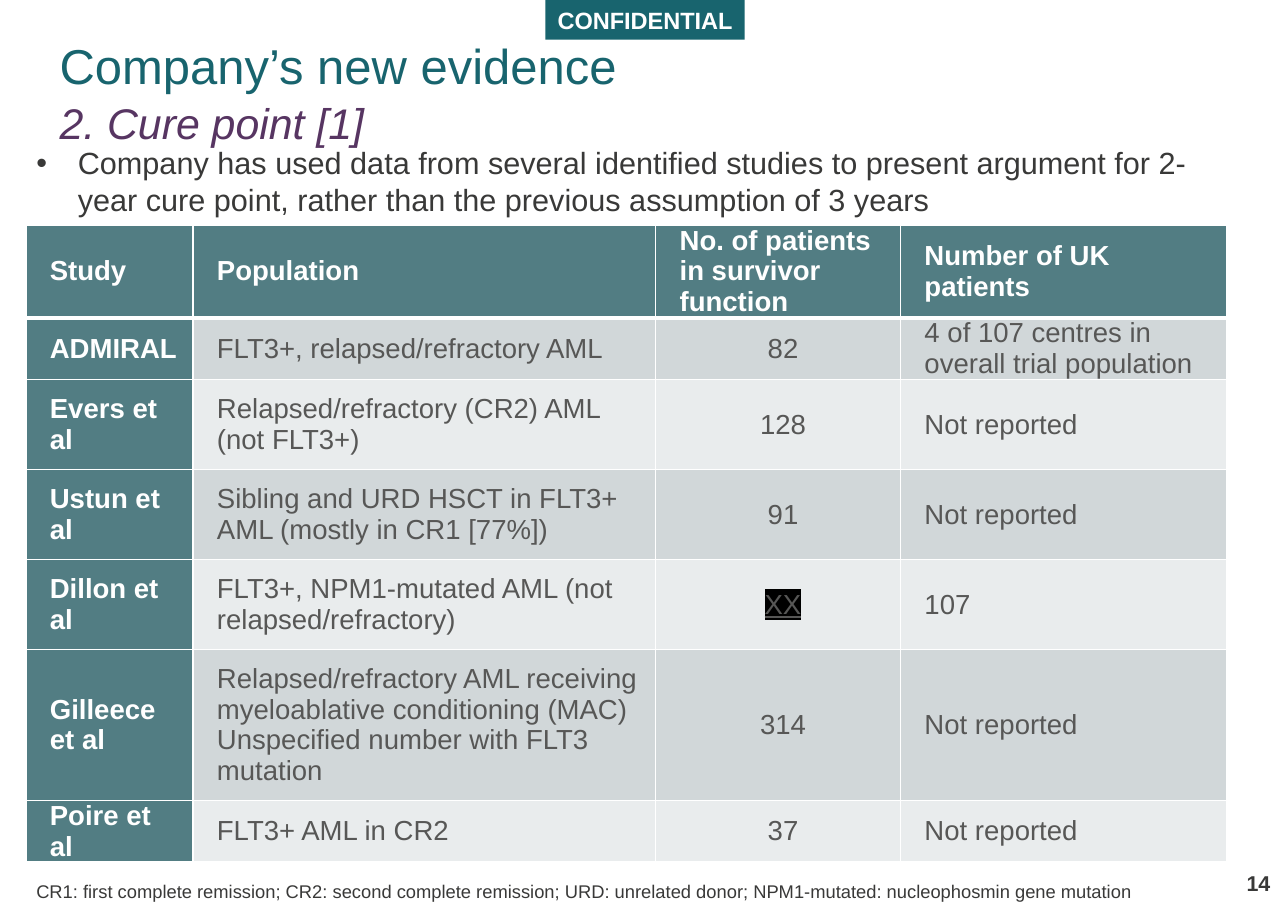
from dataclasses import dataclass
from lxml.etree import SubElement
from pptx import Presentation
from pptx.dml.color import RGBColor
from pptx.enum.shapes import MSO_SHAPE
from pptx.enum.text import MSO_ANCHOR, MSO_AUTO_SIZE, PP_ALIGN
from pptx.oxml import parse_xml
from pptx.oxml.ns import nsdecls, qn
from pptx.util import Pt

# Content
BANNER = "CONFIDENTIAL"
TITLE = "Company’s new evidence"
TOPIC = "2. Cure point [1]"
POINT = ("Company has used data from several identified studies to present "
         "argument for 2-year cure point, rather than the previous "
         "assumption of 3 years")
STUDIES = [
    ("Study", "Population", "No. of patients in survivor function",
     "Number of UK patients"),
    ("ADMIRAL", "FLT3+, relapsed/refractory AML", "82",
     "4 of 107 centres in overall trial population"),
    ("Evers et al", "Relapsed/refractory (CR2) AML (not FLT3+)", "128",
     "Not reported"),
    ("Ustun et al", "Sibling and URD HSCT in FLT3+ AML (mostly in CR1 [77%])",
     "91", "Not reported"),
    ("Dillon et al", "FLT3+, NPM1-mutated AML (not relapsed/refractory)",
     "XX", "107"),
    ("Gilleece et al", "Relapsed/refractory AML receiving myeloablative "
     "conditioning (MAC) Unspecified number with FLT3 mutation",
     "314", "Not reported"),
    ("Poire et al", "FLT3+ AML in CR2", "37", "Not reported"),
]
REDACTED = "XX"
NOTE = ("CR1: first complete remission; CR2: second complete remission; "
        "URD: unrelated donor; NPM1-mutated: nucleophosmin gene mutation")
PAGE = "14"
WIDTHS = [109.2, 302.4, 160, 213]
HEIGHTS = [60.8, 39.8, 58.8, 58.8, 58.8, 98.6, 39.8]


@dataclass(frozen=True)
class Theme:
    font: str = "Arial"
    teal: str = "18646E"
    plum: str = "573562"
    ink: str = "393938"
    grey: str = "575756"
    head: str = "527D83"
    bands: tuple = ("E9ECED", "D1D7D9")
    white: str = "FFFFFF"
    black: str = "000000"
    title: float = 32
    topic: float = 28
    point: float = 20
    cell: float = 18
    banner: float = 15.4
    page: float = 14
    note: float = 12


T = Theme()


def add_run(para, text, size, color, bold=False, italic=False):
    run = para.add_run()
    run.text = text
    font = run.font
    font.size, font.bold, font.italic = Pt(size), bold, italic
    font.color.rgb = RGBColor.from_string(color)
    font.name = T.font
    return run


def pad(item, left, top, right, bottom):
    item.margin_left, item.margin_top = Pt(left), Pt(top)
    item.margin_right, item.margin_bottom = Pt(right), Pt(bottom)


def place(shape, left, top, width, height):
    shape.left, shape.top = Pt(left), Pt(top)
    shape.width, shape.height = Pt(width), Pt(height)


def add_box(slide, box, color):
    shape = slide.shapes.add_shape(MSO_SHAPE.RECTANGLE, *map(Pt, box))
    shape.shadow.inherit = False
    shape.fill.solid()
    shape.fill.fore_color.rgb = RGBColor.from_string(color)
    shape.line.fill.background()
    return shape.text_frame


def add_edges(cell, low):
    props = cell._tc.get_or_add_tcPr()
    for spot, (side, width) in enumerate(zip("LRTB", (1, 1, 1, low))):
        props.insert(spot, parse_xml(
            f'<a:ln{side} {nsdecls("a")} w="{Pt(width)}"><a:solidFill>'
            f'<a:srgbClr val="{T.white}"/></a:solidFill></a:ln{side}>'))


def redact(run):
    run.font.underline = True
    props = run._r.get_or_add_rPr()
    mark = SubElement(props, qn("a:highlight"))
    SubElement(mark, qn("a:srgbClr"), val=T.black)
    props.find(qn("a:solidFill")).addnext(mark)


def fill_cell(cell, text, row, col):
    label = row == 0 or col == 0
    cell.fill.solid()
    cell.fill.fore_color.rgb = RGBColor.from_string(
        T.head if label else T.bands[row % 2])
    add_edges(cell, 3 if row == 0 else 1)
    cell.vertical_anchor = MSO_ANCHOR.MIDDLE
    pad(cell, 15.6, 0, 9.4, 0)
    para = cell.text_frame.paragraphs[0]
    para.alignment = (PP_ALIGN.CENTER if row and col == 2 else PP_ALIGN.LEFT)
    run = add_run(para, text, T.cell, T.white if label else T.grey, label)
    if text == REDACTED:
        redact(run)


def main():
    deck = Presentation()
    deck.slide_width, deck.slide_height = Pt(841.68), Pt(595.44)
    slide = deck.slides.add_slide(deck.slide_layouts[1])

    # Banner
    frame = add_box(slide, (356.4, 0, 130.3, 26), T.teal)
    frame.word_wrap = False
    add_run(frame.paragraphs[0], BANNER, T.banner, T.white, True)

    # Title
    title = slide.shapes.title
    place(title, 38.9, 23, 761, 70)
    frame = title.text_frame
    frame.auto_size = MSO_AUTO_SIZE.NONE
    frame.vertical_anchor = MSO_ANCHOR.TOP
    pad(frame, 0, 0, 0, 0)
    lines = [(frame.paragraphs[0], TITLE, T.title, T.teal, False),
             (frame.add_paragraph(), TOPIC, T.topic, T.plum, True)]
    for para, text, size, color, slant in lines:
        para.alignment = PP_ALIGN.LEFT
        add_run(para, text, size, color, italic=slant)
    para.space_before = Pt(1.5)

    # Key point
    body = slide.placeholders[1]
    place(body, 16.6, 90.7, 796.3, 55.4)
    frame = body.text_frame
    frame.auto_size = MSO_AUTO_SIZE.NONE
    para = frame.paragraphs[0]
    props = para._p.get_or_add_pPr()
    props.set("marL", str(Pt(27)))
    props.set("indent", str(Pt(-27)))
    SubElement(props, qn("a:buChar"), char="•")
    para.space_before = Pt(0)
    add_run(para, POINT, T.point, T.ink)

    # Study table
    table = slide.shapes.add_table(
        len(HEIGHTS), len(WIDTHS), Pt(17), Pt(147),
        Pt(sum(WIDTHS)), Pt(sum(HEIGHTS))).table
    for col, width in zip(table.columns, WIDTHS):
        col.width = Pt(width)
    for row, height in zip(table.rows, HEIGHTS):
        row.height = Pt(height)
    for row, study in enumerate(STUDIES):
        for col, text in enumerate(study):
            fill_cell(table.cell(row, col), text, row, col)

    # Footnote
    frame = add_box(slide, (16.6, 571.7, 746, 21.8), T.white)
    frame.vertical_anchor = MSO_ANCHOR.TOP
    para = frame.paragraphs[0]
    para.alignment = PP_ALIGN.LEFT
    add_run(para, NOTE, T.note, T.ink)

    # Page number
    frame = slide.shapes.add_textbox(
        *map(Pt, (790.6, 559.4, 39.6, 26))).text_frame
    frame.word_wrap = True
    frame.vertical_anchor = MSO_ANCHOR.BOTTOM
    pad(frame, 0, 0, 0, 0)
    para = frame.paragraphs[0]
    para.alignment = PP_ALIGN.RIGHT
    add_run(para, PAGE, T.page, T.ink, True)

    deck.save("out.pptx")


if __name__ == "__main__":
    main()
